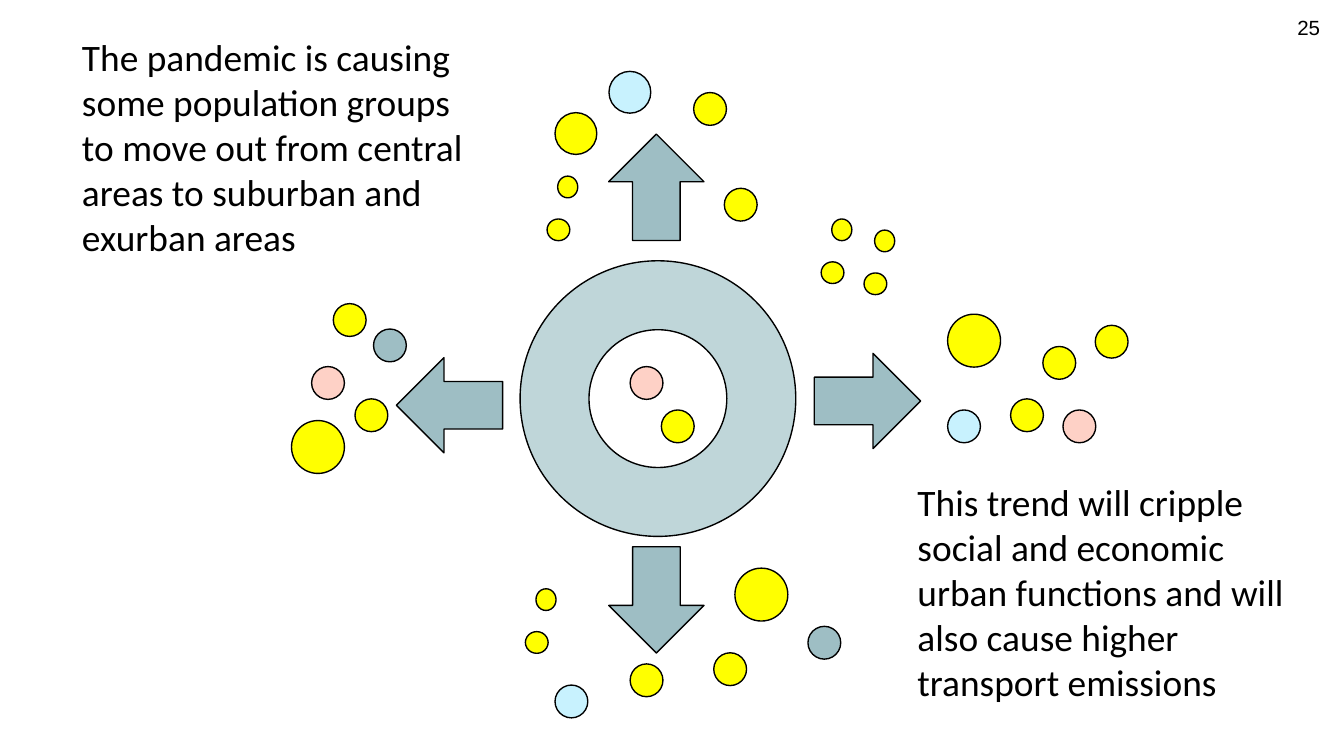
from pptx import Presentation
from pptx.dml.color import RGBColor
from pptx.enum.shapes import MSO_SHAPE as Preset
from pptx.enum.text import PP_ALIGN as Align
from pptx.util import Cm, Pt

BLACK, YELLOW, BLUE, PINK, TEAL, PALE_TEAL = (
    "000000", "FFFF00", "C8F2FE", "FED1C6", "9EBEC4", "BFD6D9")

# text, (left, top, width, height), font, size, alignment
TEXTS = [
    ("25", (24.03, 0.15, 1.17, 0.48), "Arial", 11, Align.RIGHT),
    ("The pandemic is causing some population groups to move out from "
     "central areas to suburban and exurban areas",
     (1.3, 0.53, 7.8, 4.52), "Calibri", 20, Align.LEFT),
    ("This trend will cripple social and economic urban functions and will "
     "also cause higher transport emissions",
     (17.09, 8.94, 7.8, 4.52), "Calibri", 20, Align.LEFT),
]

CITY_RING = (9.83, 4.93, 5.21, 5.21)
ARROW_SIZE = (2.01, 1.8)
# rotation: (left, top)
ARROWS = {0: (15.39, 6.68), 90: (11.4, 10.44),
          180: (7.49, 6.76), 270: (11.4, 2.64)}

# colour, diameter, [(left, top), ...]
GROUPS = [
    (YELLOW, 1.0, [(5.51, 7.95), (13.89, 10.74), (17.91, 5.94)]),
    (YELLOW, 0.79, [(10.49, 2.13)]),
    (YELLOW, 0.62, [(13.11, 1.75), (13.49, 12.34), (11.91, 12.55),
                    (6.3, 5.74), (20.7, 6.15), (19.71, 6.55), (19.1, 7.54),
                    (6.71, 7.54), (13.69, 3.56), (12.5, 7.75)]),
    (BLUE, 0.79, [(11.51, 1.35)]),
    (BLUE, 0.62, [(17.91, 7.75), (10.49, 12.95)]),
    (PINK, 0.62, [(20.09, 7.75), (11.91, 6.93), (5.89, 6.93)]),
    (TEAL, 0.62, [(7.06, 6.22), (15.27, 11.84)]),
]

# Small households come in pairs: a wide dot with a narrow one above it
PAIRS = [(15.52, 4.95), (16.33, 5.16), (9.93, 11.94), (10.34, 4.14)]
PAIR_SHIFT = (0.2, -0.81)
WIDE, NARROW = (0.43, 0.41), (0.38, 0.41)


def rgb(value):
    return RGBColor.from_string(value)


def add_outlined(slide, preset, place, colour, rotation=0):
    shape = slide.shapes.add_shape(preset, *map(Cm, place))
    shape.rotation = rotation
    shape.shadow.inherit = False
    shape.fill.solid()
    shape.fill.fore_color.rgb = rgb(colour)
    shape.line.color.rgb = rgb(BLACK)
    shape.line.width = Pt(0.75)


def add_text(slide, text, place, font, size, alignment):
    box = slide.shapes.add_textbox(*map(Cm, place))
    box.text_frame.word_wrap = True
    box.text_frame.text = text
    para = box.text_frame.paragraphs[0]
    para.alignment = alignment
    span = para.runs[0]
    span.font.name = font
    span.font.size = Pt(size)
    span.font.color.rgb = rgb(BLACK)


def main():
    deck = Presentation()
    deck.slide_width, deck.slide_height = Cm(25.4), Cm(14.29)
    slide = deck.slides.add_slide(deck.slide_layouts[6])

    for item in TEXTS:
        add_text(slide, *item)
    for rotation, corner in ARROWS.items():
        add_outlined(slide, Preset.RIGHT_ARROW, corner + ARROW_SIZE, TEAL, rotation)
    add_outlined(slide, Preset.DONUT, CITY_RING, PALE_TEAL)

    for colour, diameter, corners in GROUPS:
        for corner in corners:
            add_outlined(slide, Preset.OVAL, corner + (diameter, diameter), colour)
    for left, top in PAIRS:
        upper = (left + PAIR_SHIFT[0], top + PAIR_SHIFT[1])
        add_outlined(slide, Preset.OVAL, (left, top) + WIDE, YELLOW)
        add_outlined(slide, Preset.OVAL, upper + NARROW, YELLOW)

    deck.save("out.pptx")


if __name__ == "__main__":
    main()
